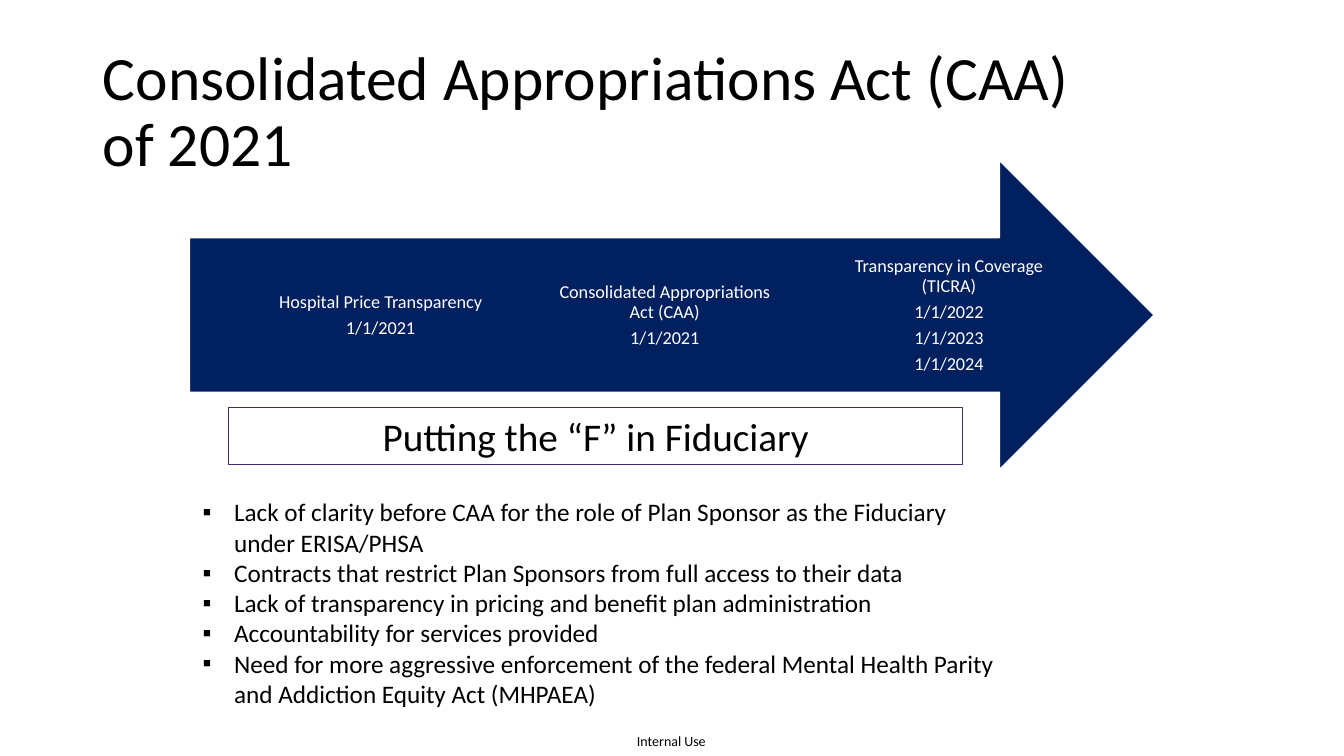
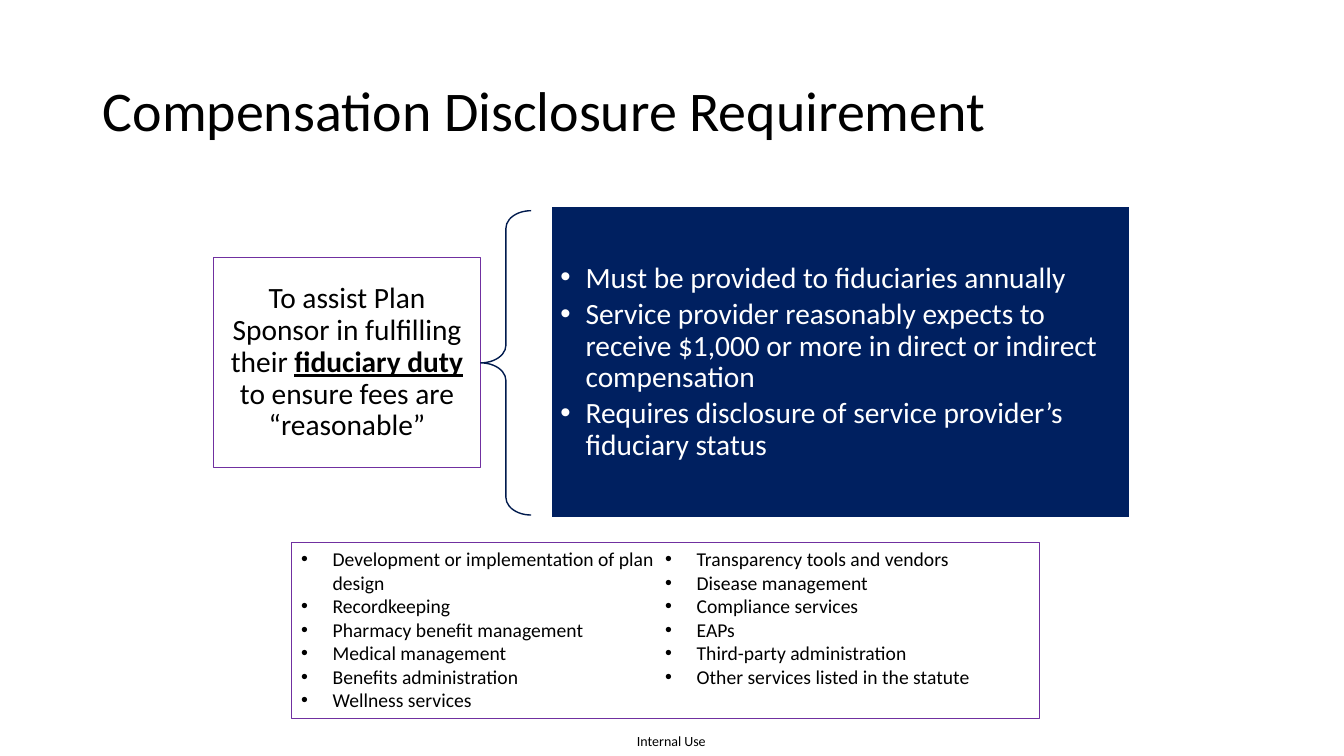
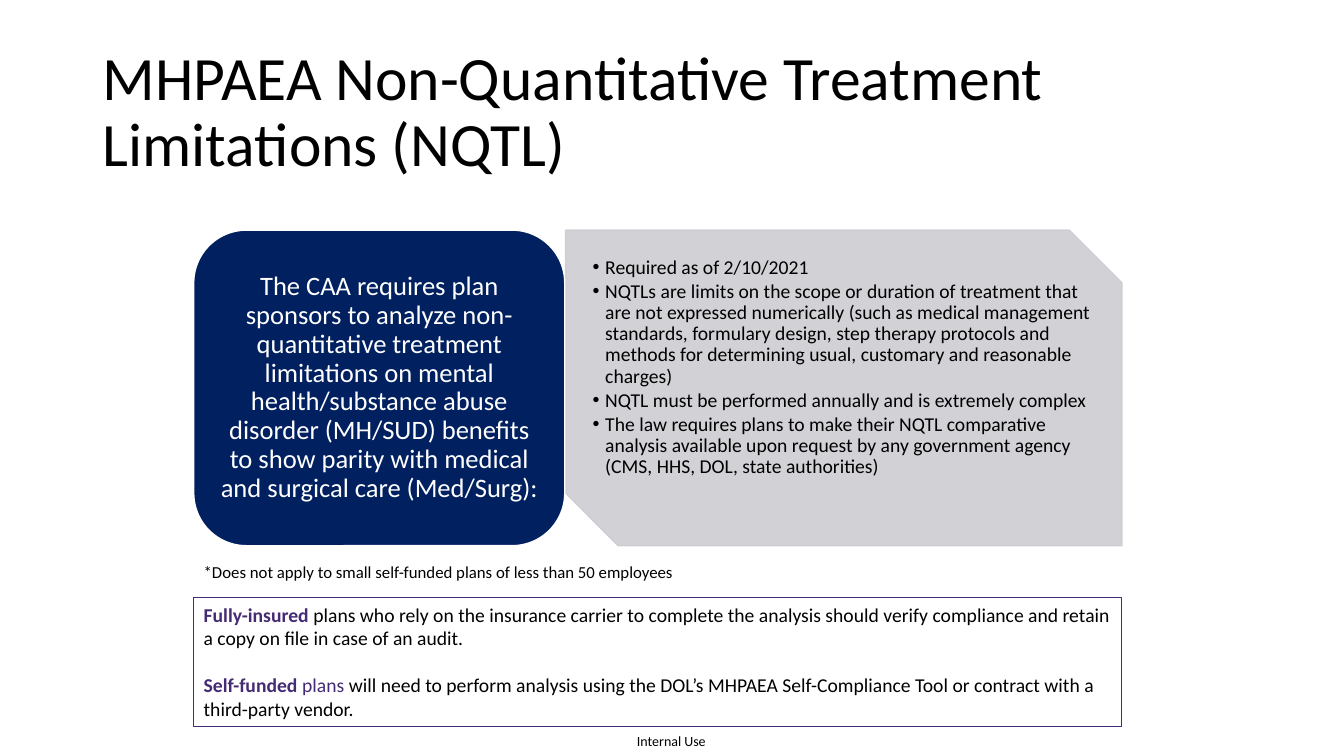
from lxml.etree import SubElement
from pptx import Presentation
from pptx.dml.color import RGBColor
from pptx.enum.shapes import MSO_SHAPE as SHAPE
from pptx.enum.text import MSO_ANCHOR as ANCHOR, MSO_AUTO_SIZE as FIT, PP_ALIGN as ALIGN
from pptx.oxml.ns import qn
from pptx.util import Pt

FONT = "Calibri"
NAVY, DARK_NAVY, WHITE, BLACK = "002060", "001A4D", "FFFFFF", "000000"
VIOLET, PURPLE, GREY = "452B73", "7030A0", "CCCDD2"
TITLE_BOX = (66.2, 28.8, 828, 104.4)


def rgb(value):
    return RGBColor.from_string(value)


def apply(obj, **values):
    """Set each named attribute of obj."""
    for name, value in values.items():
        setattr(obj, name, value)


def place(sp, box):
    apply(sp, **dict(zip(("left", "top", "width", "height"), map(Pt, box))))


def add_bullet(p, char, indent):
    pPr = p._p.get_or_add_pPr()
    pPr.set("marL", str(Pt(indent)))
    pPr.set("indent", str(-Pt(indent)))
    SubElement(pPr, qn("a:buFont")).set("typeface", "Arial")
    SubElement(pPr, qn("a:buChar")).set("char", char)


def add_runs(p, text, size, color, bold, underline):
    """Add text as one run for each line, with line breaks between them."""
    for i, line in enumerate(text.split("\n")):
        if i:
            p.add_line_break()
        r = p.add_run()
        r.text = line
        apply(r.font, name=FONT, size=Pt(size), bold=bold, underline=underline)
        r.font.color.rgb = rgb(color)


def write(sp, paragraphs, size, color=BLACK, align=ALIGN.LEFT, anchor=ANCHOR.TOP,
          spacing=1.0, after=0, bullet=None, indent=22.5, margins=(7.2, 3.6),
          wrap=True, fit=FIT.NONE):
    """Fill sp; a paragraph is a string or a list of (text, colour, bold, underline)."""
    tf = sp.text_frame
    side, edge = map(Pt, margins)
    apply(tf, word_wrap=wrap, auto_size=fit, vertical_anchor=anchor, margin_left=side,
          margin_right=side, margin_top=edge, margin_bottom=edge)
    for i, runs in enumerate(paragraphs):
        p = tf.add_paragraph() if i else tf.paragraphs[0]
        apply(p, alignment=align, line_spacing=spacing, space_before=Pt(0),
              space_after=Pt(after))
        if bullet:
            add_bullet(p, bullet, indent)
        if isinstance(runs, str):
            runs = [(runs, color, False, False)]
        for text, *look in runs:
            add_runs(p, text, size, *look)


def paint(sp, fill=None, line=None, width=1):
    if fill:
        sp.fill.solid()
        sp.fill.fore_color.rgb = rgb(fill)
    else:
        sp.fill.background()
    if line:
        sp.line.color.rgb = rgb(line)
        sp.line.width = Pt(width)
    else:
        sp.line.fill.background()


def add_shape(s, kind, box, **look):
    sp = s.shapes.add_shape(kind, *map(Pt, box))
    sp.shadow.inherit = False
    paint(sp, **look)
    return sp


def add_text(s, box, paragraphs, size, **style):
    sp = s.shapes.add_textbox(*map(Pt, box))
    write(sp, paragraphs, size, **style)
    return sp


def add_list(s, box, items, size, **style):
    """Put items in the body placeholder, in front of the shapes drawn so far."""
    sp = s.placeholders[1]
    place(sp, box)
    write(sp, items, size, **style)
    s.shapes.element.append(sp.element)
    return sp


def set_transparency(sp, opacity):
    for color in sp.element.spPr.iter(qn("a:srgbClr")):
        SubElement(color, qn("a:alpha")).set("val", str(opacity * 1000))


def add_slide(prs, title, size=44):
    s = prs.slides.add_slide(prs.slide_layouts[1])
    place(s.shapes.title, TITLE_BOX)
    write(s.shapes.title, [title], size, anchor=ANCHOR.MIDDLE, spacing=0.9)
    return s


def move_footer_to_master(prs, s):
    footer = add_text(s, (455, 522.9, 51.8, 12.2), ["Internal Use"], 10,
                      margins=(0, 0), wrap=False)
    footer.element.nvSpPr.cNvPr.set("id", "20")
    prs.slide_master.shapes.element.append(footer.element)


def build_act(prs):
    s = add_slide(prs, "Consolidated Appropriations Act (CAA)\nof 2021")
    move_footer_to_master(prs, s)
    add_shape(s, SHAPE.RIGHT_ARROW, (135.4, 114.5, 689, 221), fill=NAVY, line=WHITE)
    milestones = [
        ["Hospital Price Transparency", "1/1/2021"],
        ["Consolidated Appropriations Act (CAA)", "1/1/2021"],
        ["Transparency in Coverage (TICRA)", "1/1/2022", "1/1/2023", "1/1/2024"],
    ]
    for i, milestone in enumerate(milestones):
        add_text(s, (187.2 + 203 * i, 170, 169.2, 111), milestone, 13, color=WHITE,
                 align=ALIGN.CENTER, anchor=ANCHOR.MIDDLE, spacing=0.9, after=4.5,
                 margins=(0, 10))
    motto = add_shape(s, SHAPE.RECTANGLE, (163.4, 291, 524.2, 41), line=VIOLET, width=0.75)
    write(motto, ["Putting the “F” in Fiduciary"], 28, align=ALIGN.CENTER)
    add_list(s, (137.5, 351.2, 582.5, 160), [
        "Lack of clarity before CAA for the role of Plan Sponsor as the Fiduciary "
        "under ERISA/PHSA",
        "Contracts that restrict Plan Sponsors from full access to their data",
        "Lack of transparency in pricing and benefit plan administration",
        "Accountability for services provided",
        "Need for more aggressive enforcement of the federal Mental Health Parity "
        "and Addiction Equity Act (MHPAEA)",
    ], 18, bullet="▪")


def build_disclosure(prs):
    s = add_slide(prs, "Compensation Disclosure Requirement", 40)
    purpose = add_shape(s, SHAPE.RECTANGLE, (152.8, 184.2, 190.2, 149.8),
                        line=PURPLE, width=0.75)
    write(purpose, [[
        ("To assist Plan Sponsor in fulfilling their ", BLACK, False, False),
        ("fiduciary duty", BLACK, True, True),
        (" to ensure fees are “reasonable”", BLACK, False, False),
    ]], 21, align=ALIGN.CENTER, anchor=ANCHOR.MIDDLE, spacing=0.9, margins=(11.5, 4.3))
    brace = add_shape(s, SHAPE.LEFT_BRACE, (343.4, 150.5, 36, 217.4), line=DARK_NAVY)
    brace.adjustments[0] = 0.35
    rules = add_list(s, (393.8, 147.6, 413.3, 222.5), [
        "Must be provided to fiduciaries annually",
        "Service provider reasonably expects to receive $1,000 or more in direct or "
        "indirect compensation",
        "Requires disclosure of service provider’s fiduciary status",
    ], 21, color=WHITE, anchor=ANCHOR.MIDDLE, spacing=0.9, after=3.2, bullet="•",
        indent=18, margins=(6.5, 6.5))
    paint(rules, fill=NAVY, line=WHITE)
    services = add_shape(s, SHAPE.RECTANGLE, (208, 387.2, 534.2, 126),
                         line=PURPLE, width=0.75)
    write(services, [
        "Development or implementation of plan design",
        "Recordkeeping",
        "Pharmacy benefit management",
        "Medical management",
        "Benefits administration",
        "Wellness services",
        "Transparency tools and vendors",
        "Disease management",
        "Compliance services",
        "EAPs",
        "Third-party administration",
        "Other services listed in the statute",
    ], 14, bullet="•", fit=FIT.SHAPE_TO_FIT_TEXT)
    services.text_frame._txBody.bodyPr.set("numCol", "2")


def build_limitations(prs):
    s = add_slide(prs, "MHPAEA Non-Quantitative Treatment Limitations (NQTL)")
    panel = add_shape(s, SHAPE.SNIP_2_DIAG_RECTANGLE, (404, 164.4, 397.4, 225.4),
                      fill=GREY, line=GREY)
    set_transparency(panel, 90)
    add_list(s, (422.6, 183, 360, 188), [
        "Required as of 2/10/2021",
        "NQTLs are limits on the scope or duration of treatment that are not expressed "
        "numerically (such as medical management standards, formulary design, step "
        "therapy protocols and methods for determining usual, customary and reasonable "
        "charges)",
        "NQTL must be performed annually and is extremely complex",
        "The law requires plans to make their NQTL comparative analysis available upon "
        "request by any government agency (CMS, HHS, DOL, state authorities)",
    ], 14, spacing=0.9, after=2.1, bullet="•", indent=9, margins=(0.7, 0.7))
    duty = add_shape(s, SHAPE.ROUNDED_RECTANGLE, (138.4, 164.4, 265, 225.4),
                     fill=NAVY, line=WHITE)
    write(duty, [
        "The CAA requires plan sponsors to analyze non-quantitative treatment limitations "
        "on mental health/substance abuse disorder (MH/SUD) benefits to show parity with "
        "medical and surgical care (Med/Surg):",
    ], 19, color=WHITE, align=ALIGN.CENTER, anchor=ANCHOR.MIDDLE, spacing=0.9,
        margins=(5.8, 2.9))
    plans = add_shape(s, SHAPE.RECTANGLE, (138.4, 426.8, 663, 92.2), line=VIOLET, width=0.75)
    write(plans, [
        [("Fully-insured", VIOLET, True, False),
         (" plans who rely on the insurance carrier to complete the analysis should verify "
          "compliance and retain a copy on file in case of an audit.", BLACK, False, False)],
        [("Self-funded", VIOLET, True, False),
         (" plans ", VIOLET, False, False),
         ("will need to perform analysis using the DOL’s MHPAEA Self-Compliance Tool or "
          "contract with a third-party vendor.", BLACK, False, False)],
    ], 14, after=17)
    add_text(s, (138.4, 397.4, 386, 21.6),
             ["*Does not apply to small self-funded plans of less than 50 employees"],
             12, wrap=False)


def main():
    prs = Presentation()
    apply(prs, slide_width=Pt(960), slide_height=Pt(540))
    build_act(prs)
    build_disclosure(prs)
    build_limitations(prs)
    prs.save("out.pptx")


if __name__ == "__main__":
    main()
